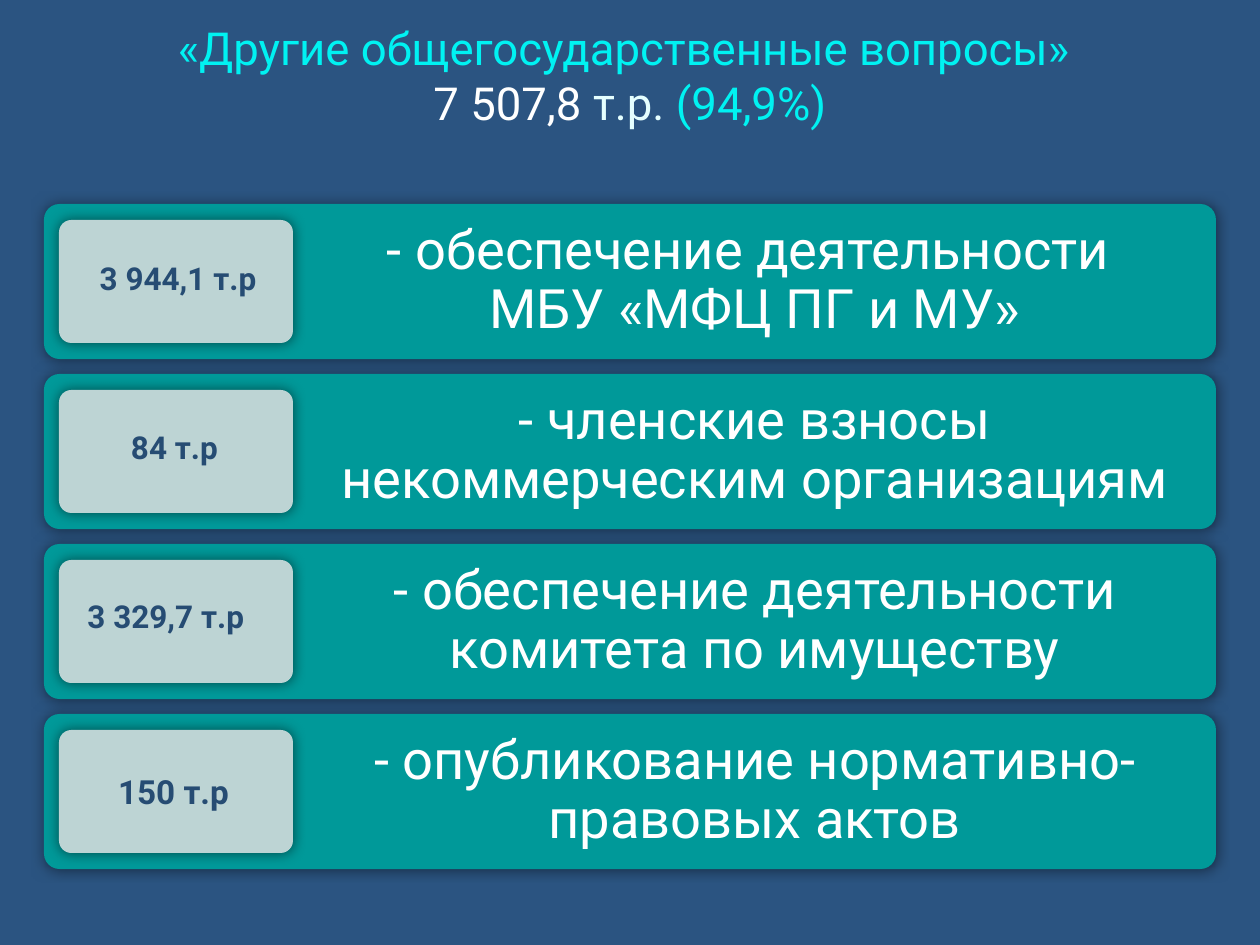
from lxml.etree import SubElement
from pptx import Presentation
from pptx.dml.color import RGBColor
from pptx.enum.shapes import MSO_SHAPE as SHAPE
from pptx.enum.text import MSO_ANCHOR as ANCHOR, MSO_AUTO_SIZE as AUTO, PP_ALIGN as ALIGN
from pptx.oxml.ns import qn
from pptx.util import Emu, Pt

FONT = "Roboto"
NAVY, TEAL, PALE, INK = "2B5481", "009999", "BDD4D4", "264C73"
CYAN, ICE, WHITE = "00F2F2", "E5FFFF", "FFFFFF"
ROW_TOP, ROW_STEP, ROW_H = 204, 170, 155
BAR_X, BAR_W, BADGE_X, BADGE_W, PAD = 44, 1172, 59, 234, 16
TITLE = [
    ("«Другие общегосударственные вопросы» \v", CYAN),
    ("7 507,8 ", WHITE),
    ("т.р. ", ICE),
    ("(94,9%)", CYAN),
]
ITEMS = [
    "- обеспечение деятельности \vМБУ «МФЦ ПГ и МУ»",
    "- членские взносы некоммерческим организациям",
    "- обеспечение деятельности комитета по имуществу",
    "- опубликование нормативно-правовых актов",
]
AMOUNTS = [
    ("3 944,1 т.р", 74, 253, 208, 18, ALIGN.CENTER),
    ("84 т.р", 66, 422, 217, 18, ALIGN.CENTER),
    ("3 329,7 т.р", 75, 591, 211, 18, ALIGN.LEFT),
    ("150 т.р", 64, 765, 219, 19, ALIGN.CENTER),
]


def px(n):
    """Turn whole pixels into EMU."""
    return Emu(round(n * 914400 / 126))


def color(value):
    """Return the colour for a hex string."""
    return RGBColor.from_string(value)


def style(font, size, value, bold=False):
    """Set face, size, colour and weight of a font."""
    font.name, font.size, font.bold = FONT, Pt(size), bold
    font.color.rgb = color(value)


def add_text(shapes, box, runs, size, align=ALIGN.CENTER, bold=False):
    """Add a wrapping text box with one paragraph of coloured runs."""
    tf = shapes.add_textbox(*map(px, box)).text_frame
    tf.word_wrap = True
    p = tf.paragraphs[0]
    p.alignment = align
    for text, value in runs:
        r = p.add_run()
        r.text = text.rstrip("\v")
        style(r.font, size, value, bold)
        if text.endswith("\v"):
            p.add_line_break()
    return tf


def add_panel(shapes, box, fill):
    """Add a rounded panel with a soft dark glow."""
    sp = shapes.add_shape(SHAPE.ROUNDED_RECTANGLE, *map(px, box))
    sp.adjustments[0] = 0.1
    sp.fill.solid()
    sp.fill.fore_color.rgb = color(fill)
    sp.line.fill.background()
    sp.shadow.inherit = False
    effects = sp._element.spPr.find(qn("a:effectLst"))
    glow = SubElement(effects, qn("a:outerShdw"), blurRad=str(Pt(7.5)), dist="0",
                      dir="0", algn="ctr", rotWithShape="0")
    black = SubElement(glow, qn("a:srgbClr"), val="000000")
    SubElement(black, qn("a:alpha"), val="50000")


def add_item(shapes, top, text):
    """Add a bar with its wording and an empty badge."""
    add_panel(shapes, (BAR_X, top, BAR_W, ROW_H), TEAL)
    left = BADGE_X + BADGE_W
    lines = text.split("\v")
    runs = [(line + "\v", WHITE) for line in lines[:-1]] + [(lines[-1], WHITE)]
    tf = add_text(shapes, (left, top, BAR_X + BAR_W - left, ROW_H), runs, 31)
    tf.vertical_anchor = ANCHOR.MIDDLE
    tf.margin_left = tf.margin_right = tf.margin_top = tf.margin_bottom = px(PAD)
    tf.paragraphs[0].line_spacing = 0.9
    add_panel(shapes, (BADGE_X, top + PAD, BADGE_W, ROW_H - 2 * PAD), PALE)


def main():
    """Build the slide of spending items."""
    prs = Presentation()
    prs.slide_width, prs.slide_height = px(1260), px(945)
    s = prs.slides.add_slide(prs.slide_layouts[6])
    s.background.fill.solid()
    s.background.fill.fore_color.rgb = color(NAVY)
    title = add_text(s.shapes, (0, 14, 1260, 123), TITLE, 26)
    title.auto_size = AUTO.SHAPE_TO_FIT_TEXT
    group = s.shapes.add_group_shape()
    for i, text in enumerate(ITEMS):
        add_item(group.shapes, ROW_TOP + i * ROW_STEP, text)
    for text, x, y, w, size, align in AMOUNTS:
        tf = add_text(s.shapes, (x, y, w, 50), [(text, INK)], size, align, True)
        tf.auto_size = AUTO.SHAPE_TO_FIT_TEXT
    prs.save("out.pptx")


if __name__ == "__main__":
    main()
